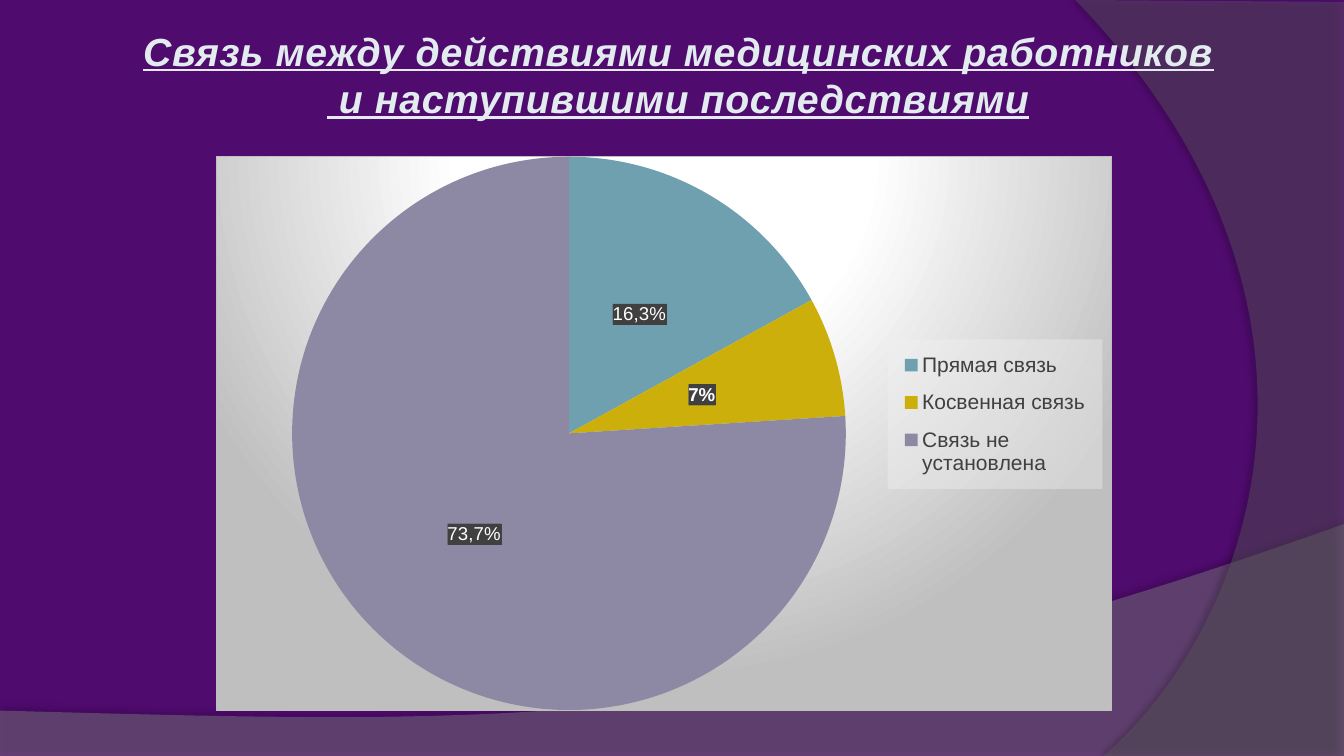
from dataclasses import dataclass

from lxml import etree
from pptx import Presentation
from pptx import util as u
from pptx.chart.data import CategoryChartData
from pptx.dml.color import RGBColor
from pptx.enum import chart as ch, text
from pptx.oxml import parse_xml
from pptx.oxml.ns import nsdecls, qn

FONT = "Arial"
NS = nsdecls("a", "c")
Point = tuple[float, float]


@dataclass
class Wave:
    """Straight corners, then a Bezier curve: two controls and its end."""
    corners: list[Point]
    curve: list[Point]
    color: str
    opacity: int
    shadow_opacity: int
    shadow_dist: float
    shadow_angle: int


@dataclass
class Slice:
    name: str
    value: int
    color: str
    label: str = ""


WAVES = [
    Wave([(0, 507.6), (0, 540), (960, 540), (960, 374.4)],
         [(536.4, 524.9), (375.1, 517.7), (0, 507.6)], "7F7F7F", 45, 35, 3.5, 270),
    Wave([(768.2, 0), (960, 1.4), (960, 540), (788.4, 540)],
         [(897.1, 445.7), (977, 216), (768.2, 0)], "5E5E5E", 40, 45, 4, 180),
]
SLICES = [
    Slice("Прямая связь", 17, "6EA0B0", "16,3%"),
    Slice("Косвенная связь", 7, "CCAF0A"),
    Slice("Связь не установлена", 76, "8D89A4", "73,7%"),
]
TITLE = ["Связь между действиями медицинских работников",
         " и наступившими последствиями"]


def rgb(value: str) -> RGBColor:
    return RGBColor.from_string(value)


def paint(fill, color: str) -> None:
    fill.solid()
    fill.fore_color.rgb = rgb(color)


def format_font(font, size: float, color: str, bold=False, italic=False, underline=False) -> None:
    font.name, font.size = FONT, u.Pt(size)
    font.bold, font.italic, font.underline = bold, italic, underline
    font.color.rgb = rgb(color)


def add_text(p, content: str, *, spacing: float = 0, **style) -> None:
    r = p.add_run()
    r.text = content
    format_font(r.font, **style)
    if spacing:
        r._r.get_or_add_rPr().set("spc", str(round(spacing * 100)))


def bezier(points: list[Point], steps: int = 60) -> list[Point]:
    def at(t: float, axis: int) -> float:
        a, b, c, d = (pt[axis] for pt in points)
        return (1-t)**3 * a + 3*(1-t)**2 * t * b + 3*(1-t) * t**2 * c + t**3 * d
    return [(at(i / steps, 0), at(i / steps, 1)) for i in range(1, steps + 1)]


def add_wave(s, wave: Wave) -> None:
    outline = wave.corners + bezier([wave.corners[-1], *wave.curve])
    start, *rest = [(u.Pt(x), u.Pt(y)) for x, y in outline]
    builder = s.shapes.build_freeform(*start)
    builder.add_line_segments(rest, close=True)
    sp = builder.convert_to_shape()
    paint(sp.fill, wave.color)
    sp.line.fill.background()
    color = sp._element.spPr.find(".//" + qn("a:srgbClr"))
    etree.SubElement(color, qn("a:alpha"), val=str(wave.opacity * 1000))
    sp._element.spPr.append(parse_xml(
        f'<a:effectLst {NS}><a:outerShdw blurRad="{u.Pt(4)}" dist="{u.Pt(wave.shadow_dist)}" '
        f'dir="{wave.shadow_angle * 60000}" algn="ctr" rotWithShape="0"><a:srgbClr val="000000">'
        f'<a:alpha val="{wave.shadow_opacity * 1000}"/></a:srgbClr></a:outerShdw></a:effectLst>'))


def layout(x: float, y: float, w: float, h: float, target: str = ""):
    """Manual chart layout, in fractions of the chart."""
    inner = f'<c:layoutTarget val="{target}"/>' if target else ""
    sizes = "".join(f'<c:{k} val="{v}"/>' for k, v in zip("xywh", (x, y, w, h)))
    return parse_xml(f'<c:layout {NS}><c:manualLayout>{inner}<c:xMode val="edge"/>'
                     f'<c:yMode val="edge"/>{sizes}</c:manualLayout></c:layout>')


def box(content: str):
    return parse_xml(f"<c:spPr {NS}>{content}</c:spPr>")


def label_box():
    return box('<a:pattFill prst="dkVert"><a:fgClr><a:srgbClr val="404040"/></a:fgClr>'
               '<a:bgClr><a:srgbClr val="595959"/></a:bgClr></a:pattFill><a:ln><a:noFill/></a:ln>')


def style_slices(series) -> None:
    labels = series.data_labels
    labels.show_percentage, labels.show_value = True, False
    labels.number_format, labels.number_format_is_linked = "0%", False
    labels.position = ch.XL_LABEL_POSITION.CENTER
    format_font(labels.font, 13.3, "FFFFFF", bold=True)
    labels._element.find(qn("c:txPr")).addprevious(label_box())
    for i, part in enumerate(SLICES):
        point = series.points[i]
        paint(point.format.fill, part.color)
        point.format.line.fill.background()
        if part.label:
            label = point.data_label
            add_text(label.text_frame.paragraphs[0], part.label, size=13.3, color="FFFFFF")
            label.position = ch.XL_LABEL_POSITION.CENTER
            tx = label.text_frame._txBody.getparent()
            tx.addnext(label_box())


def style_legend(chart) -> None:
    chart.has_legend = True
    legend = chart.legend
    legend.position = ch.XL_LEGEND_POSITION.RIGHT
    legend.include_in_layout = False
    format_font(legend.font, 15, "404040")
    el = legend._element
    for old in el.findall(qn("c:layout")):
        el.remove(old)
    el.find(qn("c:legendPos")).addnext(layout(0.75, 0.33, 0.24, 0.27))
    el.find(qn("c:txPr")).addprevious(box(
        '<a:solidFill><a:srgbClr val="F2F2F2"><a:alpha val="39000"/></a:srgbClr></a:solidFill>'
        '<a:ln><a:noFill/></a:ln>'))


def add_pie(s) -> None:
    data = CategoryChartData()
    data.categories = [part.name for part in SLICES]
    data.add_series("Series 1", [part.value for part in SLICES])
    chart = s.shapes.add_chart(ch.XL_CHART_TYPE.PIE, u.Pt(154.2), u.Pt(111.6),
                               u.Pt(640), u.Pt(396), data).chart
    chart.has_title = False
    format_font(chart.font, 10, "FFFFFF")
    chart.plots[0].vary_by_categories = True
    style_slices(chart.plots[0].series[0])
    style_legend(chart)
    space = chart._chartSpace
    area = space.find(".//" + qn("c:plotArea"))
    for old in area.findall(qn("c:layout")):
        area.remove(old)
    area.insert(0, layout(0.006, 0, 0.776, 1, "inner"))
    stops = "".join(f'<a:gs pos="{pos * 1000}"><a:srgbClr val="{color}"/></a:gs>'
                    for pos, color in ((0, "FFFFFF"), (39, "FFFFFF"), (100, "BFBFBF")))
    space.find(qn("c:txPr")).addprevious(box(
        f'<a:gradFill><a:gsLst>{stops}</a:gsLst><a:path path="circle">'
        '<a:fillToRect l="50000" t="-80000" r="50000" b="180000"/></a:path></a:gradFill>'
        f'<a:ln w="{u.Pt(0.75)}"><a:solidFill><a:srgbClr val="BFBFBF"/></a:solidFill></a:ln>'))


def add_title(s) -> None:
    tf = s.shapes.add_textbox(u.Pt(52.6), u.Pt(15.8), u.Pt(864), u.Pt(75)).text_frame
    tf.word_wrap = True
    tf.auto_size = text.MSO_AUTO_SIZE.SHAPE_TO_FIT_TEXT
    for i, line in enumerate(TITLE):
        p = tf.add_paragraph() if i else tf.paragraphs[0]
        p.alignment = text.PP_ALIGN.CENTER
        add_text(p, line, size=28, color="E2ECEF", bold=True, italic=True,
                 underline=True, spacing=0.5)


def main() -> None:
    prs = Presentation()
    prs.slide_width, prs.slide_height = u.Pt(960), u.Pt(540)
    s = prs.slides.add_slide(prs.slide_layouts[6])
    paint(s.background.fill, "500B6F")
    for wave in WAVES:
        add_wave(s, wave)
    add_pie(s)
    add_title(s)
    prs.save("out.pptx")


if __name__ == "__main__":
    main()
